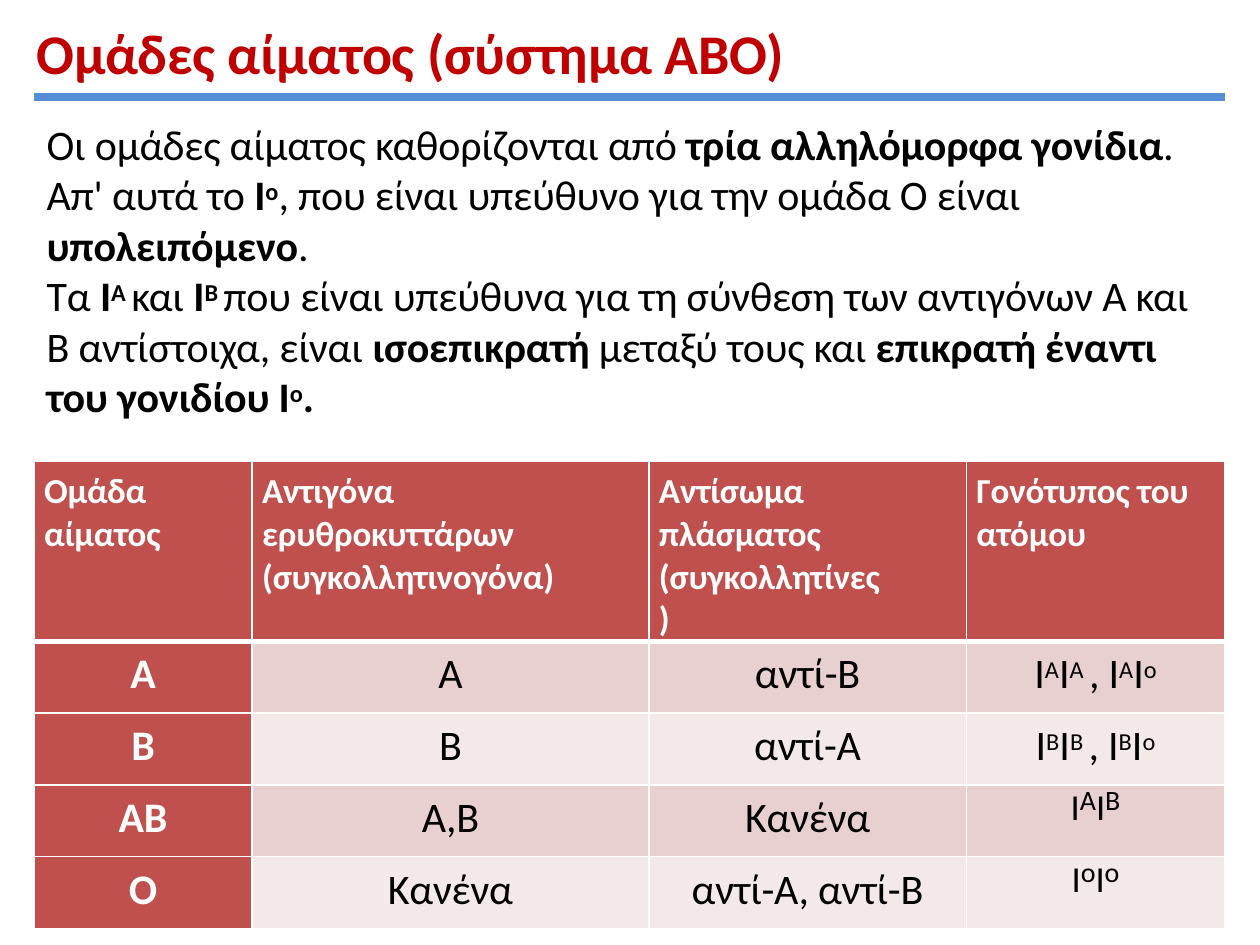
from pptx import Presentation
from pptx.dml.color import RGBColor
from pptx.enum.shapes import MSO_CONNECTOR as Connector
from pptx.enum.text import MSO_ANCHOR as Anchor, MSO_AUTO_SIZE as AutoSize, PP_ALIGN as Align
from pptx.oxml.ns import qn
from pptx.util import Inches, Pt
from lxml.etree import SubElement

WHITE = RGBColor(0xFF, 0xFF, 0xFF)
BLACK = RGBColor(0, 0, 0)
TITLE_RED = RGBColor(0xC0, 0, 0)
RULE_BLUE = RGBColor(0x54, 0x8E, 0xD4)
HEADER_RED = RGBColor(0xC0, 0x50, 0x4D)
BANDS = [RGBColor(0xE8, 0xD0, 0xD0), RGBColor(0xF4, 0xE9, 0xE9)]

LEFT = Inches(0.27)
COLUMNS = [1.73, 3.15, 2.52, 2.05]
ROWS = [1.17] + [0.57] * 4


def write(para, spans, size, color, bold=None, align=Align.LEFT):
    """Fill a paragraph with (text, style) spans: b bold, s superscript, l large and low, m small."""
    para.alignment = align
    para.space_before = Pt(0)
    para.font.name = "Calibri"
    para.font.size = Pt(size)
    para.font.color.rgb = color
    para.font.bold = bold
    for text, style in spans:
        span = para.add_run()
        span.text = text
        if "b" in style:
            span.font.bold = True
        properties = span._r.get_or_add_rPr()
        properties.set("spc", "-10")
        if "s" in style:
            properties.set("baseline", "24000")
        if "l" in style:
            span.font.size = Pt(36)
            properties.set("baseline", "-16000")
        if "m" in style:
            span.font.size = Pt(16)


def set_borders(cell, top, bottom):
    for side, width in (("L", 1), ("R", 1), ("T", top), ("B", bottom)):
        line = SubElement(cell._tc.get_or_add_tcPr(), qn(f"a:ln{side}"), w=str(Pt(width)))
        SubElement(SubElement(line, qn("a:solidFill")), qn("a:srgbClr"), val=str(WHITE))


deck = Presentation()
deck.slide_width, deck.slide_height = Inches(10), Inches(7.5)
page = deck.slides.add_slide(deck.slide_layouts[1])
title, body = page.placeholders

# Title and body frames
for box, area, indent in ((title, (0.28, 0.14, 6.01, 0.56), 0.01),
                          (body, (0.33, 0.93, 9.32, 2.43), 0.04)):
    box.left, box.top, box.width, box.height = map(Inches, area)
    frame = box.text_frame
    frame.auto_size = AutoSize.NONE
    frame.vertical_anchor = Anchor.TOP
    frame.word_wrap = box is body
    frame.margin_left, frame.margin_top = Inches(indent), Inches(0.01)
    frame.margin_right = frame.margin_bottom = 0

write(title.text_frame.paragraphs[0], [("Ομάδες αίματος (σύστημα ΑΒΟ)", "")], 32, TITLE_RED, True)

# Rule under the title
rule = page.shapes.add_connector(Connector.STRAIGHT, LEFT, Inches(0.77), Inches(9.72), Inches(0.77))
rule.line.color.rgb = RULE_BLUE
rule.line.width = Pt(4.56)
SubElement(rule._element.spPr, qn("a:effectLst"))

# Body text
body_paragraphs = [
    [("Οι ομάδες αίματος καθορίζονται από ", ""), ("τρία αλληλόμορφα γονίδια", "b"),
     (".  Απ' αυτά το ", ""), ("Ι", "b"), ("ο", "bs"),
     (", που είναι υπεύθυνο για την ομάδα Ο είναι  ", ""), ("υπολειπόμενο", "b"), (".", "")],
    [("Τα ", ""), ("Ι", "b"), ("Α ", "bs"), ("και ", ""), ("Ι", "b"), ("Β ", "bs"),
     ("που είναι υπεύθυνα για τη σύνθεση των αντιγόνων Α και  Β αντίστοιχα, είναι ", ""),
     ("ισοεπικρατή ", "b"), ("μεταξύ τους και ", ""),
     ("επικρατή έναντι  του γονιδίου Ι", "b"), ("ο", "bs"), (".", "b")],
]
for number, spans in enumerate(body_paragraphs):
    para = body.text_frame.paragraphs[0] if number == 0 else body.text_frame.add_paragraph()
    properties = para._p.get_or_add_pPr()
    properties.set("marL", "0")
    properties.set("indent", "0")
    SubElement(properties, qn("a:buNone"))
    write(para, spans, 24, BLACK)

# Blood group table
headers = ["Ομάδα  αίματος", "Αντιγόνα  ερυθροκυττάρων  (συγκολλητινογόνα)",
           "Αντίσωμα  πλάσματος  (συγκολλητίνες)", "Γονότυπος του  ατόμου"]
groups = [
    ("Α", "Α", "αντί-Β", [("Ι", ""), ("Α", "s"), ("Ι", ""), ("Α ", "s"), (", Ι", ""),
                          ("Α", "s"), ("Ι", ""), ("ο", "s")]),
    ("Β", "Β", "αντί-Α", [("Ι", ""), ("Β", "s"), ("Ι", ""), ("Β ", "s"), (", Ι", ""),
                          ("Β", "s"), ("Ι", ""), ("ο", "s")]),
    ("ΑΒ", "Α,Β", "Κανένα", [("Ι", "l"), ("Α", "m"), ("Ι", "l"), ("Β", "m")]),
    ("Ο", "Κανένα", "αντί-Α, αντί-Β", [("Ι", "l"), ("ο", "m"), ("Ι", "l"), ("ο", "m")]),
]
table = page.shapes.add_table(len(ROWS), len(COLUMNS), LEFT, Inches(3.66),
                              Inches(sum(COLUMNS)), Inches(sum(ROWS))).table
for column, width in zip(table.columns, COLUMNS):
    column.width = Inches(width)
for row, height in zip(table.rows, ROWS):
    row.height = Inches(height)

for r, values in enumerate([headers] + groups):
    for c, value in enumerate(values):
        cell = table.cell(r, c)
        para = cell.text_frame.paragraphs[0]
        is_header = r == 0
        is_red = is_header or c == 0
        is_low = c == 3 and r > 2
        cell.margin_left = Inches(0.08) if is_header else 0
        cell.margin_right = cell.margin_bottom = 0
        cell.margin_top = Inches(0.07 if is_header else 0 if is_low else 0.06)
        set_borders(cell, 3 if r == 1 else 1, 3 if is_header else 1)
        cell.fill.solid()
        cell.fill.fore_color.rgb = HEADER_RED if is_red else BANDS[(r - 1) % 2]
        if is_header and c == 2:
            para._p.get_or_add_pPr().set("marR", str(Inches(0.61)))
        if is_low:
            para.line_spacing = Pt(26.1)
        spans = [(value, "")] if isinstance(value, str) else value
        write(para, spans, 20 if is_header else 24, WHITE if is_red else BLACK, is_red,
              Align.LEFT if is_header else Align.CENTER)

deck.save("out.pptx")
